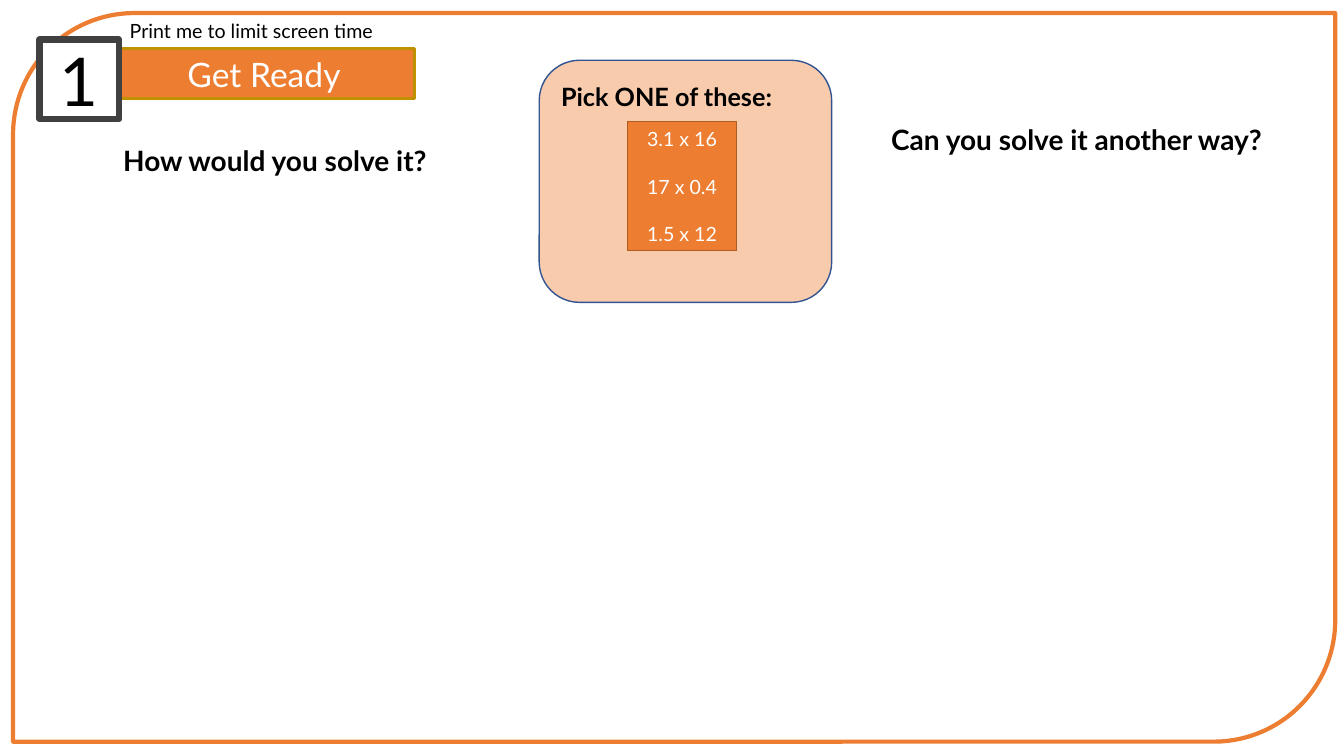
from pptx import Presentation
from pptx import util as u
from pptx.dml.color import RGBColor
from pptx.enum import shapes, text

ORANGE, PEACH, WHITE, BLACK = "ED7D31", "F8CBAD", "FFFFFF", "000000"


def colour(value):
    return RGBColor.from_string(value)


def bezier(start, curves, steps=10):
    """Return points along joined cubic curves."""
    points = []
    for bend1, bend2, end in curves:
        for step in range(1, steps + 1):
            t = step / steps
            weights = ((1 - t) ** 3, 3 * t * (1 - t) ** 2, 3 * t * t * (1 - t), t ** 3)
            corners = (start, bend1, bend2, end)
            points.append(tuple(sum(w * c[axis] for w, c in zip(weights, corners))
                                for axis in (0, 1)))
        start = end
    return points


class Worksheet:
    font = "Lato"
    kinds = shapes.MSO_SHAPE

    def __init__(self, slide):
        self.slide = slide

    def paint(self, shape, fill, line, width):
        shape.shadow.inherit = False
        if fill:
            shape.fill.solid()
            shape.fill.fore_color.rgb = colour(fill)
        else:
            shape.fill.background()
        shape.line.color.rgb = colour(line)
        shape.line.width = u.Pt(width)
        return shape

    def panel(self, kind, box, fill, line, width):
        shape = self.slide.shapes.add_shape(kind, *map(u.Cm, box))
        return self.paint(shape, fill, line, width)

    def outline(self, start, curves, fill, line, width):
        builder = self.slide.shapes.build_freeform(*start, scale=u.Cm(1))
        builder.add_line_segments(bezier(start, curves), close=True)
        return self.paint(builder.convert_to_shape(), fill, line, width)

    def label(self, box, wording, size, bold=False, align=text.PP_ALIGN.CENTER):
        holder = self.slide.shapes.add_textbox(*map(u.Cm, box))
        self.put_text(holder, [wording], size, BLACK, bold, align, text.MSO_ANCHOR.TOP)

    def put_text(self, shape, lines, size, ink, bold=False, align=text.PP_ALIGN.CENTER,
                 anchor=text.MSO_ANCHOR.MIDDLE, gap=0):
        frame = shape.text_frame
        frame.word_wrap = True
        frame.vertical_anchor = anchor
        style = {"name": self.font, "size": u.Pt(size), "bold": bold}
        for index, line in enumerate(lines):
            paragraph = frame.add_paragraph() if index else frame.paragraphs[0]
            paragraph.alignment = align
            paragraph.space_before = u.Pt(gap if index else 0)
            run = paragraph.add_run()
            run.text = line
            for key, value in style.items():
                setattr(run.font, key, value)
            run.font.color.rgb = colour(ink)


def main():
    deck = Presentation()
    deck.slide_width, deck.slide_height = u.Cm(33.87), u.Cm(19.05)
    sheet = Worksheet(deck.slides.add_slide(deck.slide_layouts[6]))
    kinds = sheet.kinds

    sheet.panel(kinds.ROUND_2_DIAG_RECTANGLE, (0.33, 0.33, 33.32, 18.36), None, ORANGE, 3)
    banner = sheet.panel(kinds.RECTANGLE, (2.87, 1.22, 7.57, 1.27), ORANGE, "BF9000", 2.25)
    sheet.put_text(banner, ["Get Ready"], 24, WHITE)

    wobbly_edges = [
        ((0.91, 0.61), (1.5, 0.74), (1.75, 0.64)),
        ((2.03, 0.53), (2.36, 0.69), (2.87, 0.64)),
        ((2.97, 1.02), (2.84, 1.5), (2.87, 1.73)),
        ((2.92, 1.96), (2.87, 2.41), (2.87, 2.95)),
        ((2.62, 2.97), (2.29, 2.87), (1.75, 2.95)),
        ((1.24, 3.05), (1.14, 2.9), (0.56, 2.95)),
        ((0.43, 2.64), (0.58, 2.08), (0.56, 1.83)),
        ((0.53, 1.57), (0.61, 0.89), (0.56, 0.64)),
    ]
    step_number = sheet.outline((0.56, 0.64), wobbly_edges, WHITE, "404040", 4.5)
    sheet.put_text(step_number, ["1"], 48, BLACK)

    sheet.label((2.08, 3.48, 9.7, 1.12), "How would you solve it?", 20, bold=True)
    sheet.panel(kinds.ROUNDED_RECTANGLE, (13.59, 1.52, 7.37, 6.1), PEACH, "325491", 1)
    sums = sheet.panel(kinds.RECTANGLE, (15.82, 3.07, 2.74, 3.25), ORANGE, "AF5C24", 1)
    sheet.put_text(sums, ["3.1 x 16", "17 x 0.4", "1.5 x 12"], 14, WHITE, gap=17)

    sheet.label((20.96, 2.95, 12.34, 1.12), "Can you solve it another way?", 20, bold=True)
    left = text.PP_ALIGN.LEFT
    sheet.label((3.02, 0.36, 8.76, 0.86), "Print me to limit screen time", 14, align=left)
    sheet.label((13.89, 1.93, 6.83, 1.02), "Pick ONE of these:", 18, bold=True, align=left)
    deck.save("out.pptx")


if __name__ == "__main__":
    main()
